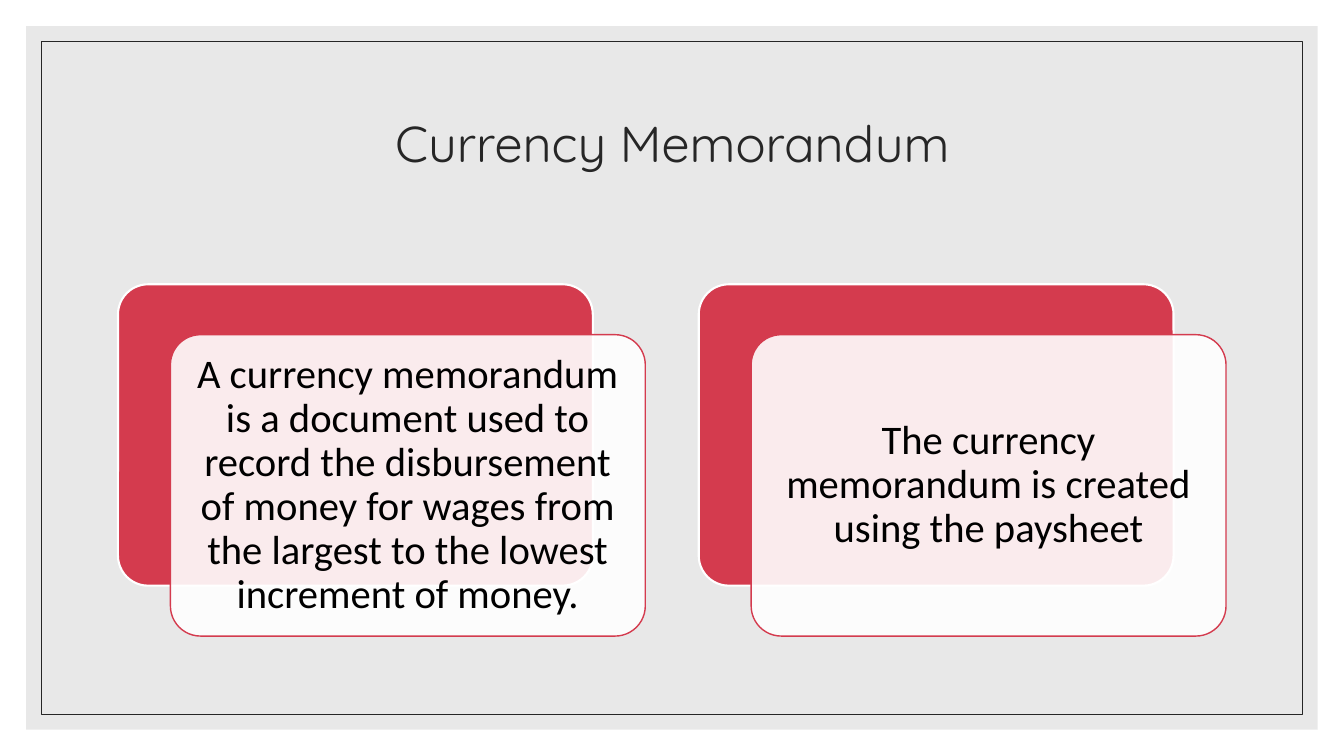
from dataclasses import dataclass
from lxml.etree import SubElement
from pptx import Presentation
from pptx.dml.color import RGBColor
from pptx.enum.shapes import MSO_SHAPE as Preset
from pptx.enum.text import MSO_ANCHOR as Anchor, PP_ALIGN as Align
from pptx.oxml.ns import qn
from pptx.util import Inches, Pt

TITLE = "Currency Memorandum"
CARDS = [
    "A currency memorandum is a document used to record the disbursement of money "
    "for wages from the largest to the lowest increment of money.",
    "The currency memorandum is created using the paysheet",
]


@dataclass(frozen=True)
class Theme:
    paper: str = "FFFFFF"
    panel: str = "D9D9D9"
    ink: str = "262626"
    accent: str = "D43B4E"
    card_ink: str = "000000"
    title_font: str = "Quicksand"
    card_font: str = "Calibri"
    title_size: int = 36
    card_size: int = 29


THEME = Theme()
SLIDE_W, SLIDE_H = 13.33, 7.5
PANEL_MARGIN, BORDER_MARGIN = 0.26, 0.41
TITLE_BOX = (1.17, 0.7, 11, 1.5)
CARD_LEFT, CARD_TOP, CARD_W, CARD_H = 1.17, 2.82, 4.71, 2.99
CARD_STEP, CARD_SHIFT, CARD_INSET = 5.76, (0.52, 0.5), 0.12


def color(code):
    return RGBColor.from_string(code)


def add_block(slide, preset, box, fill=None, alpha=100, line=None, weight=1):
    block = slide.shapes.add_shape(preset, *map(Inches, box))
    block.shadow.inherit = False
    if preset == Preset.ROUNDED_RECTANGLE:
        block.adjustments[0] = 0.1
    if fill:
        block.fill.solid()
        block.fill.fore_color.rgb = color(fill)
        if alpha < 100:
            tint = block.fill._xPr.find(qn("a:solidFill"))[0]
            SubElement(tint, qn("a:alpha"), val=str(alpha * 1000))
    else:
        block.fill.background()
    if line:
        block.line.color.rgb = color(line)
        block.line.width = Pt(weight)
    else:
        block.line.fill.background()
    return block


def write(frame, text, font, size, ink, inset):
    frame.word_wrap = True
    frame.vertical_anchor = Anchor.MIDDLE
    frame.margin_left = frame.margin_right = Inches(inset)
    frame.margin_top = frame.margin_bottom = Inches(inset)
    paragraph = frame.paragraphs[0]
    paragraph.alignment = Align.CENTER
    paragraph.line_spacing = 0.9
    run = paragraph.add_run()
    run.text = text
    run.font.name = font
    run.font.size = Pt(size)
    run.font.color.rgb = color(ink)


def inset_box(margin):
    return margin, margin, SLIDE_W - 2 * margin, SLIDE_H - 2 * margin


def add_card(slide, index, text):
    left = CARD_LEFT + index * CARD_STEP
    add_block(slide, Preset.ROUNDED_RECTANGLE, (left, CARD_TOP, CARD_W, CARD_H),
              fill=THEME.accent, line=THEME.paper, weight=1.5)
    shift_x, shift_y = CARD_SHIFT
    front = add_block(slide, Preset.ROUNDED_RECTANGLE,
                      (left + shift_x, CARD_TOP + shift_y, CARD_W, CARD_H),
                      fill=THEME.paper, alpha=90, line=THEME.accent)
    write(front.text_frame, text, THEME.card_font, THEME.card_size,
          THEME.card_ink, CARD_INSET)


def main():
    deck = Presentation()
    deck.slide_width, deck.slide_height = Inches(SLIDE_W), Inches(SLIDE_H)
    slide = deck.slides.add_slide(deck.slide_layouts[5])
    slide.background.fill.solid()
    slide.background.fill.fore_color.rgb = color(THEME.paper)

    add_block(slide, Preset.RECTANGLE, inset_box(PANEL_MARGIN), fill=THEME.panel, alpha=60)
    add_block(slide, Preset.RECTANGLE, inset_box(BORDER_MARGIN), line=THEME.ink, weight=0.5)

    title = slide.shapes.title
    title.left, title.top, title.width, title.height = map(Inches, TITLE_BOX)
    write(title.text_frame, TITLE, THEME.title_font, THEME.title_size, THEME.ink, 0.05)
    slide.shapes._spTree.append(title._element)

    for index, text in enumerate(CARDS):
        add_card(slide, index, text)
    deck.save("out.pptx")


if __name__ == "__main__":
    main()
